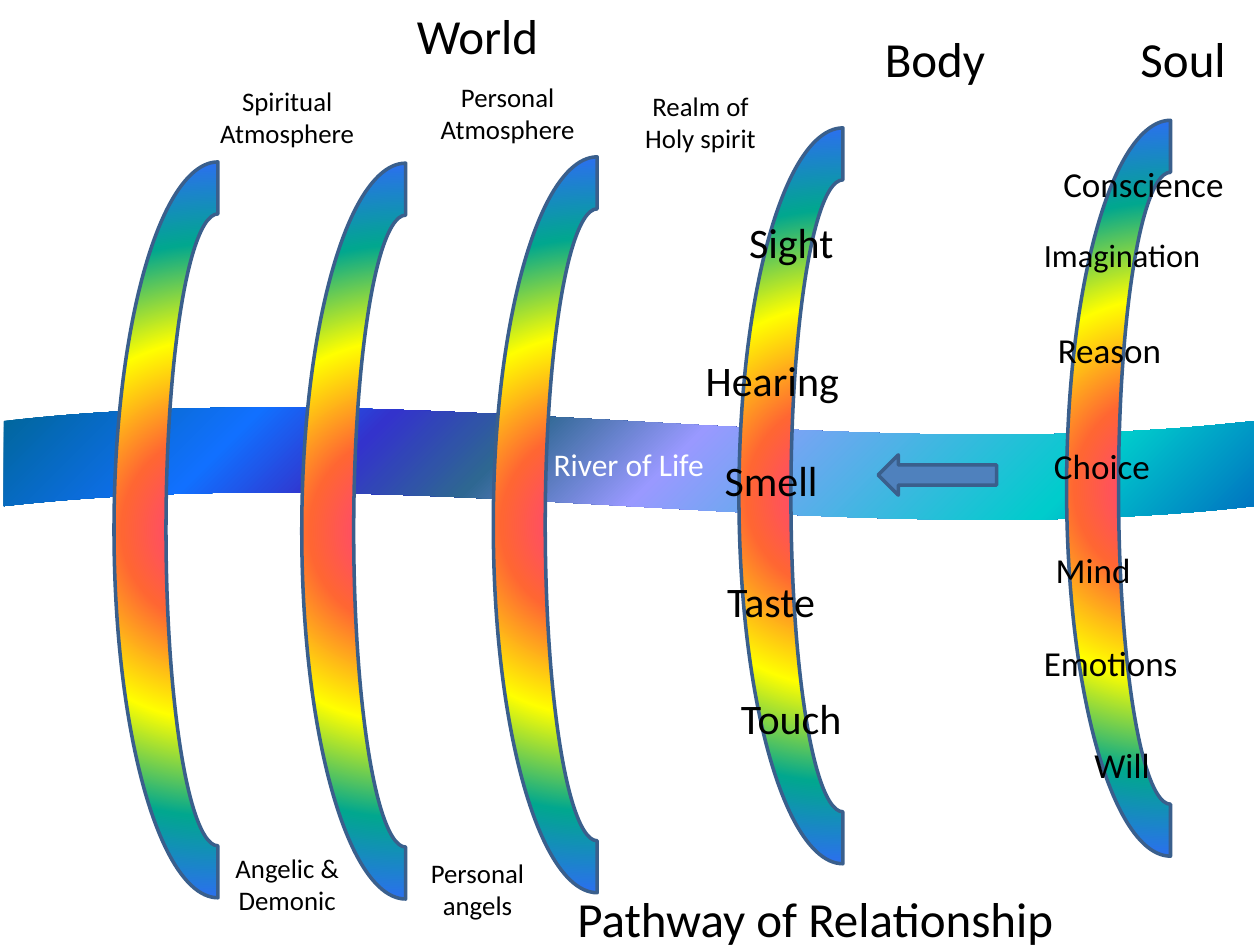
from pptx import Presentation
from pptx import util as u
from pptx.dml.color import RGBColor
from pptx.enum import shapes, text
from pptx.oxml import parse_xml
from pptx.oxml.ns import nsdecls

COLS, ROWS = 100, 75
BLACK = RGBColor(0x00, 0x00, 0x00)
WHITE = RGBColor(0xFF, 0xFF, 0xFF)
ARROW_BLUE = RGBColor(0x4F, 0x81, 0xBD)
OUTLINE = RGBColor(0x3A, 0x5F, 0x8C)

RAINBOW = [
    (0, RGBColor(0xFF, 0x33, 0x99)),
    (25, RGBColor(0xFF, 0x66, 0x33)),
    (50, RGBColor(0xFF, 0xFF, 0x00)),
    (75, RGBColor(0x01, 0xA7, 0x8F)),
    (100, RGBColor(0x33, 0x66, 0xFF)),
]
WATER = [
    (0, RGBColor(0x00, 0x70, 0xC0)),
    (16, RGBColor(0x00, 0xCC, 0xCC)),
    (47, RGBColor(0x99, 0x99, 0xFF)),
    (60, RGBColor(0x2E, 0x67, 0x92)),
    (71, RGBColor(0x33, 0x33, 0xCC)),
    (81, RGBColor(0x11, 0x70, 0xFF)),
    (100, RGBColor(0x00, 0x66, 0x99)),
]

# Labels: text, left column, top row, size in points
SOUL_LABELS = [
    ("Conscience", 84.2, 12.9, 20),
    ("Imagination", 82.5, 18.7, 18.5),
    ("Mind", 80.2, 43.5, 20),
    ("Reason", 81.5, 26.1, 20),
    ("Emotions", 81.6, 50.9, 20),
    ("Will", 82.5, 59, 20),
    ("Choice", 80.9, 35.3, 20),
]
SENSE_LABELS = [
    ("Touch", 57.1, 55, 24),
    ("Hearing", 55.6, 28.1, 24),
    ("Smell", 55.5, 36.1, 24),
    ("Taste", 55.5, 45.7, 24),
    ("Sight", 57.1, 17.2, 24),
]
REALM_LABELS = [
    ("Realm of\nHoly spirit", 49.9, 7.1, 15.3),
    ("Personal\nAtmosphere", 34.6, 6.4, 15.3),
    ("Spiritual Atmosphere", 17.1, 6.7, 15.3),
    ("Soul", 88.2, 2.3, 28),
    ("Body", 68.5, 2.3, 28),
    ("World", 32.2, 0.4, 28),
    ("Personal\nangels", 32.2, 68, 15.3),
    ("Angelic &\nDemonic", 17.1, 67.6, 15.3),
]
# Centre column and row of each arc in the outer world
WORLD_ARCS = [(47.4, 41.65), (32.2, 42.15), (17.3, 42.05)]


def write(tf, words, size=20, color=BLACK, font="Calibri",
          anchor=text.MSO_ANCHOR.TOP, inset=None):
    tf.word_wrap = True
    tf.auto_size = text.MSO_AUTO_SIZE.NONE
    tf.vertical_anchor = anchor
    if inset is not None:
        tf.margin_left = tf.margin_right = inset
        tf.margin_top = tf.margin_bottom = inset
    p = tf.paragraphs[0]
    p.text = words.replace("\n", "\v")
    p.alignment = text.PP_ALIGN.CENTER
    for r in p.runs:
        r.font.name, r.font.size = font, u.Pt(size)
        r.font.color.rgb = color


def fill_circular(sp, stops, left, top, right, bottom):
    """Fill with a circular gradient focused on a rectangle given in percent."""
    gs = "".join(f'<a:gs pos="{pos * 1000}"><a:srgbClr val="{color}"/></a:gs>'
                 for pos, color in stops)
    grad = parse_xml(
        f'<a:gradFill {nsdecls("a")} rotWithShape="1"><a:gsLst>{gs}</a:gsLst>'
        f'<a:path path="circle"><a:fillToRect l="{left * 1000}" t="{top * 1000}" '
        f'r="{right * 1000}" b="{bottom * 1000}"/></a:path></a:gradFill>')
    sp._element.spPr.prstGeom.addnext(grad)


class Board:
    """The current slide, measured on a grid, and the style of its elements."""

    def __init__(self, prs):
        self.col = prs.slide_width / COLS
        self.row = prs.slide_height / ROWS
        self.slide = prs.slides.add_slide(prs.slide_layouts[5])
        self.shapes = self.slide.shapes

    def box(self, x, y, w, h):
        return (round(x * self.col), round(y * self.row),
                round(w * self.col), round(h * self.row))

    def title(self, words, *at):
        sp = self.slide.shapes.title
        sp.left, sp.top, sp.width, sp.height = self.box(*at)
        write(sp.text_frame, words, size=28)

    def preset(self, kind, *at, outlined=True):
        sp = self.shapes.add_shape(kind, *self.box(*at))
        sp.shadow.inherit = False
        if outlined:
            sp.line.color.rgb = OUTLINE
            sp.line.width = u.Pt(2)
        else:
            sp.line.fill.background()
        return sp

    def river(self, words, *at):
        sp = self.preset(shapes.MSO_SHAPE.WAVE, *at, outlined=False)
        fill_circular(sp, WATER, 100, 100, 0, 0)
        write(sp.text_frame, words, size=18, color=WHITE,
              anchor=text.MSO_ANCHOR.MIDDLE)

    def arc(self, cx, cy, length=58.4, depth=16.5):
        sp = self.preset(shapes.MSO_SHAPE.BLOCK_ARC,
                         cx - length / 2, cy - depth / 2, length, depth)
        sp.rotation = 270
        fill_circular(sp, RAINBOW, 50, 50, 50, 50)

    def arrow(self, *at):
        sp = self.preset(shapes.MSO_SHAPE.LEFT_ARROW, *at)
        sp.fill.solid()
        sp.fill.fore_color.rgb = ARROW_BLUE

    def labels(self, items, width=11.4, height=4):
        for words, x, y, size in items:
            sp = self.shapes.add_textbox(*self.box(x, y, width, height))
            write(sp.text_frame, words, size=size, inset=0)

    def group(self):
        """Send the following elements into a new group."""
        self.shapes = self.slide.shapes.add_group_shape().shapes

    def ungroup(self):
        self.shapes = self.slide.shapes


def main():
    prs = Presentation()
    prs.slide_width, prs.slide_height = u.Inches(10), u.Inches(7.5)
    board = Board(prs)
    board.title("Pathway of Relationship", 43.7, 70, 42, 5.7)
    board.river("River of Life", 0.3, 32.3, 99.2, 9)

    board.group()
    board.arc(92.9, 38.75)
    board.labels(SOUL_LABELS, width=13.1)
    board.ungroup()

    board.arc(66.9, 39.35)
    board.labels(SENSE_LABELS)
    for cx, cy in WORLD_ARCS:
        board.arc(cx, cy)
    board.labels(REALM_LABELS)
    board.arrow(69.7, 36.1, 9.4, 3.2)
    prs.save("out.pptx")


if __name__ == "__main__":
    main()
